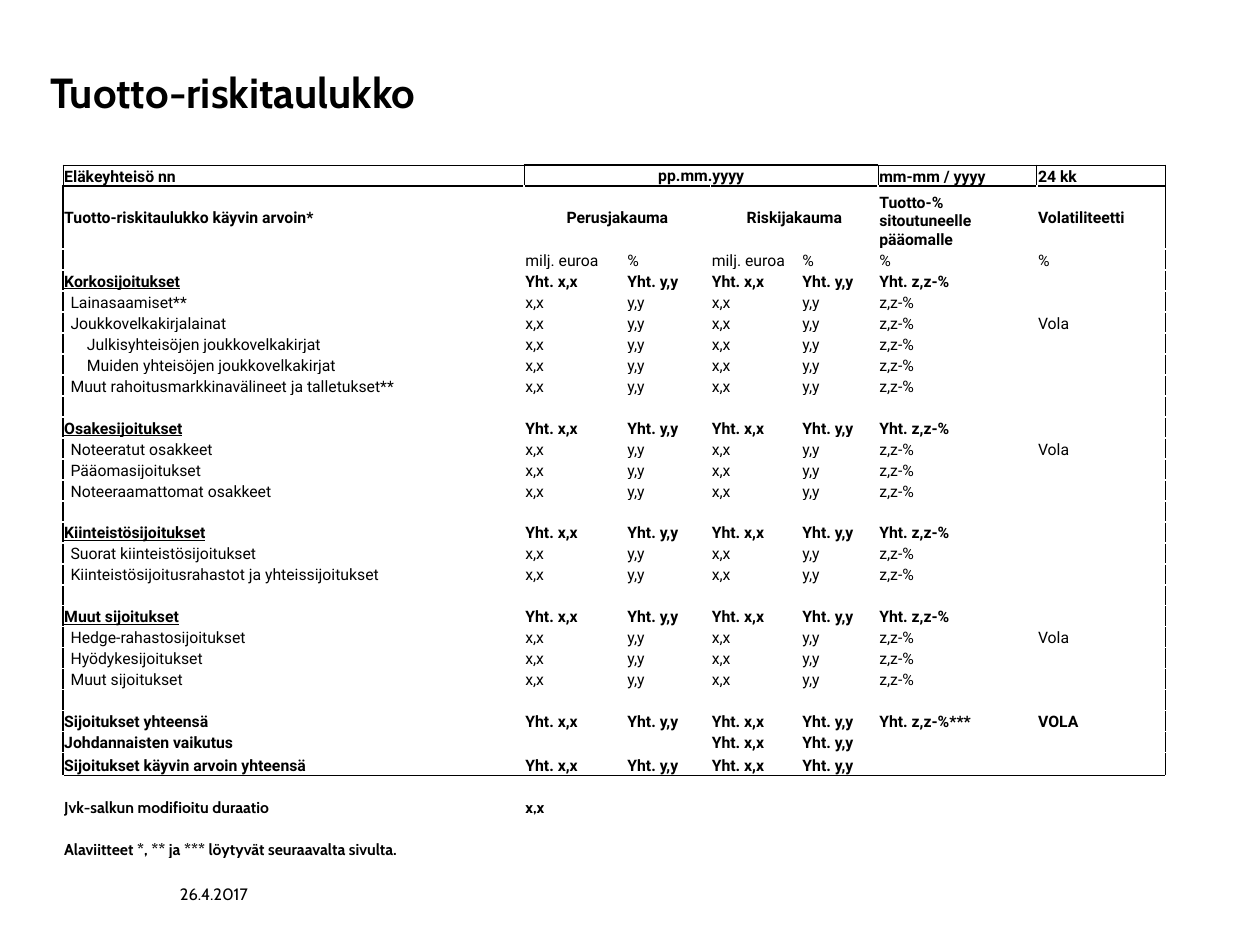
from dataclasses import dataclass

from lxml.etree import SubElement
from pptx import Presentation
from pptx.dml.color import RGBColor
from pptx.enum.text import MSO_ANCHOR, PP_ALIGN
from pptx.oxml import parse_xml
from pptx.oxml.ns import nsdecls, qn
from pptx.util import Inches, Pt


@dataclass(frozen=True)
class Theme:
    ink: str = "000000"
    heading_font: str = "Cabin"
    table_font: str = "Roboto"
    title_size: float = 24
    date_size: float = 9.4
    table_size: float = 9
    thin_line: float = 0.5
    line: float = 1


theme = Theme()


def format_text(text_frame, font_name, size, bold=False, underline=False):
    for paragraph in text_frame.paragraphs:
        for run in paragraph.runs:
            run.font.name = font_name
            run.font.size = Pt(size)
            run.font.bold = bold
            run.font.underline = underline
            run.font.color.rgb = RGBColor.from_string(theme.ink)


def set_borders(cell, **widths):
    properties = cell._tc.get_or_add_tcPr()
    sides = [side for side in "LRTB" if side in widths]
    for position, side in enumerate(sides):
        properties.insert(position, parse_xml(
            f'<a:ln{side} {nsdecls("a")} w="{int(Pt(widths[side]))}"><a:solidFill>'
            f'<a:srgbClr val="{theme.ink}"/></a:solidFill></a:ln{side}>'))


presentation = Presentation()
presentation.slide_width, presentation.slide_height = Inches(10), Inches(7.5)
slide = presentation.slides.add_slide(presentation.slide_layouts[6])

# Title and date
for text, left, top, width, height, size, bold, anchor in (
    ("Tuotto-riskitaulukko", 0.3, 0.19, 9, 1.07, theme.title_size, True, MSO_ANCHOR.MIDDLE),
    ("26.4.2017", 1.33, 6.97, 2.33, 0.4, theme.date_size, False, MSO_ANCHOR.TOP),
):
    box = slide.shapes.add_textbox(Inches(left), Inches(top), Inches(width), Inches(height))
    box.text_frame.word_wrap = True
    box.text_frame.vertical_anchor = anchor
    box.text_frame.text = text
    format_text(box.text_frame, theme.heading_font, size, bold)

# Table wording: row style, followed by the cells
values = ["x,x", "y,y", "x,x", "y,y", "z,z-%"]
totals = [f"Yht. {value}" for value in values]
blank = ("blank", "")
rows = [
    ("header", "Eläkeyhteisö nn", "pp.mm.yyyy", "", "", "", "mm-mm / yyyy", "24 kk"),
    ("header", "Tuotto-riskitaulukko käyvin arvoin*", "Perusjakauma", "", "Riskijakauma", "",
     "Tuotto-% sitoutuneelle pääomalle", "Volatiliteetti"),
    ("units", "", "milj. euroa", "%", "milj. euroa", "%", "%", "%"),
    ("group", "Korkosijoitukset", *totals),
    ("item", "Lainasaamiset**", *values),
    ("item", "Joukkovelkakirjalainat", *values, "Vola"),
    ("subitem", "Julkisyhteisöjen joukkovelkakirjat", *values),
    ("subitem", "Muiden yhteisöjen joukkovelkakirjat", *values),
    ("item", "Muut rahoitusmarkkinavälineet ja talletukset**", *values),
    blank,
    ("group", "Osakesijoitukset", *totals),
    ("item", "Noteeratut osakkeet", *values, "Vola"),
    ("item", "Pääomasijoitukset", *values),
    ("item", "Noteeraamattomat osakkeet", *values),
    blank,
    ("group", "Kiinteistösijoitukset", *totals),
    ("item", "Suorat kiinteistösijoitukset", *values),
    ("item", "Kiinteistösijoitusrahastot ja yhteissijoitukset", *values),
    blank,
    ("group", "Muut sijoitukset", *totals),
    ("item", "Hedge-rahastosijoitukset", *values, "Vola"),
    ("item", "Hyödykesijoitukset", *values),
    ("item", "Muut sijoitukset", *values),
    blank,
    ("total", "Sijoitukset yhteensä", *totals[:4], "Yht. z,z-%***", "VOLA"),
    ("total", "Johdannaisten vaikutus", "", "", *totals[2:4]),
    ("total", "Sijoitukset käyvin arvoin yhteensä", *totals[:4]),
    blank,
    ("note", "Jvk-salkun modifioitu duraatio", "x,x"),
    blank,
    ("note", "Alaviitteet *, ** ja *** löytyvät seuraavalta sivulta."),
]
bold_styles = {"header", "group", "total", "note"}
indents = {"item": 0.06, "subitem": 0.19}
last_framed_row = 26

# Table grid
column_widths = [3.66, 0.81, 0.67, 0.72, 0.61, 1.26, 1.02]
last_column = len(column_widths) - 1
table = slide.shapes.add_table(len(rows), len(column_widths), Inches(0.5), Inches(1.31),
                               Inches(8.75), Inches(5.51)).table
table.first_row = table.horz_banding = False
for column, width in zip(table.columns, column_widths):
    column.width = Inches(width)
for row in table.rows:
    row.height = Inches(1 / 6)
table.rows[1].height = Inches(0.5)
table.rows[last_framed_row].height = Inches(0.18)

# Merged cells: row, first column, last column
for row_number, first, last in ((0, 1, 4), (1, 1, 2), (1, 3, 4), (30, 0, 1)):
    table.cell(row_number, first).merge(table.cell(row_number, last))

# Cell text, fills and frame
for row_number, (style, *texts) in enumerate(rows):
    texts += [""] * (len(column_widths) - len(texts))
    for column_number, text in enumerate(texts):
        cell = table.cell(row_number, column_number)
        cell.fill.background()
        cell.margin_left = Inches(indents.get(style, 0.01) if column_number == 0 else 0.01)
        cell.margin_top = cell.margin_right = Inches(0.01)
        cell.margin_bottom = 0
        cell.vertical_anchor = MSO_ANCHOR.BOTTOM
        paragraph = cell.text_frame.paragraphs[0]
        if text:
            paragraph.text = text
            format_text(cell.text_frame, theme.heading_font if style == "note" else theme.table_font,
                        theme.table_size, style in bold_styles,
                        style == "group" and column_number == 0)
        else:
            SubElement(paragraph._p, qn("a:endParaRPr"), sz=str(int(theme.table_size * 100)))

        if style == "header" and 1 <= column_number <= 4:
            paragraph.alignment = PP_ALIGN.CENTER
            cell.vertical_anchor = MSO_ANCHOR.MIDDLE
        if row_number == 1 and column_number in (0, last_column):
            cell.vertical_anchor = MSO_ANCHOR.MIDDLE

        borders = {}
        if row_number == 0:
            borders = {"T": theme.line if 1 <= column_number <= 4 else theme.thin_line,
                       "B": theme.line}
            if not cell.is_spanned:
                borders.update(L=theme.thin_line, R=theme.thin_line)
        elif row_number <= last_framed_row:
            if row_number == 1:
                borders["T"] = theme.line
            if row_number == last_framed_row:
                borders["B"] = theme.line
            if column_number == 0:
                borders["L"] = theme.line
            if column_number == last_column:
                borders["R"] = theme.line
        elif row_number == last_framed_row + 1:
            borders["T"] = theme.line
        set_borders(cell, **borders)

presentation.save("out.pptx")
